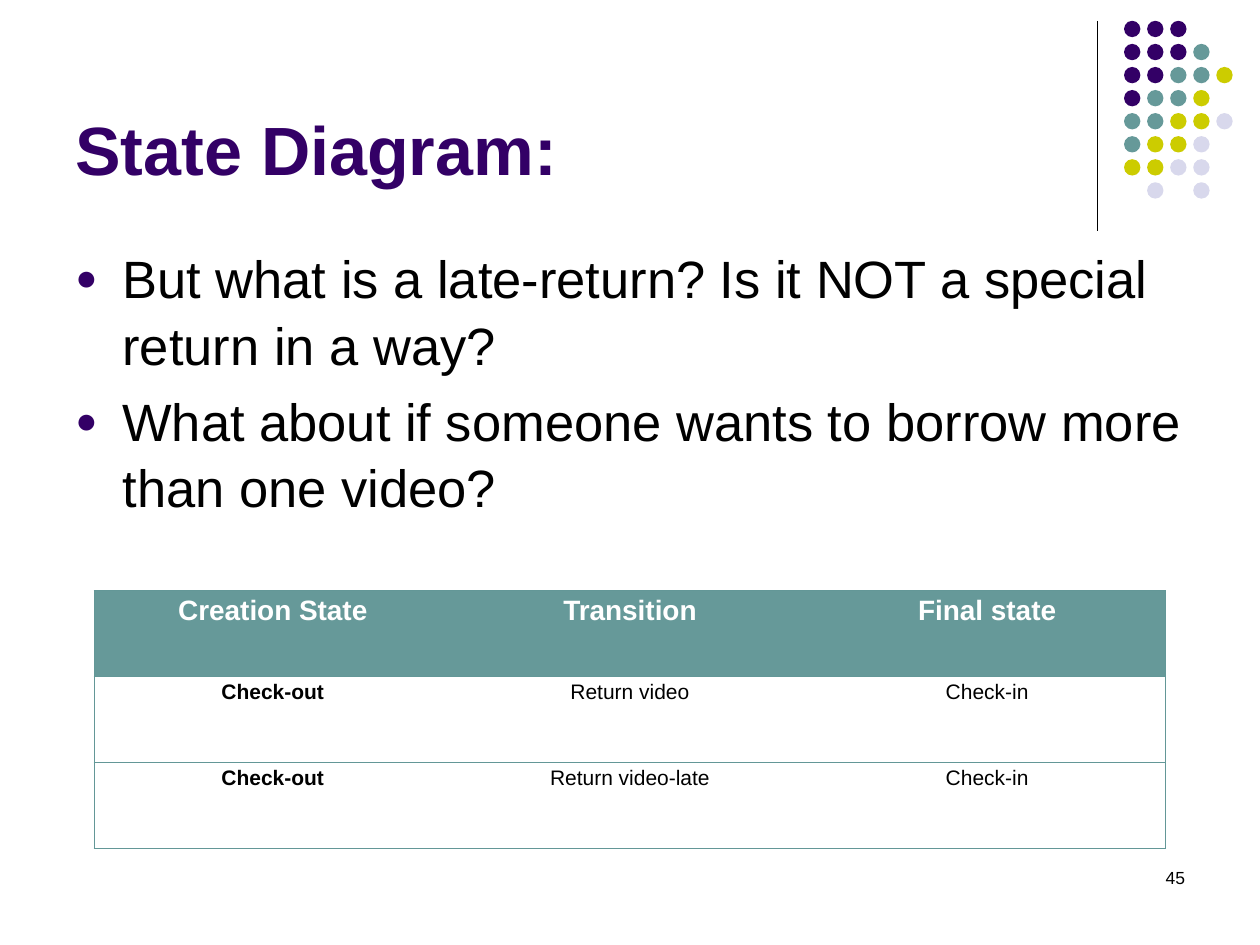
from lxml.etree import SubElement
from pptx import Presentation
from pptx.dml.color import RGBColor
from pptx.enum.shapes import MSO_CONNECTOR as CONN, MSO_SHAPE as SHAPE
from pptx.enum.text import MSO_ANCHOR as ANCHOR, PP_ALIGN as ALIGN
from pptx.oxml.ns import qn
from pptx.util import Cm, Pt

FONT = "Arial"
COLORS = {
    "purple": "330066", "teal": "669999", "lime": "CCCC00", "lilac": "D8D8EC",
    "border": "639797", "black": "000000", "white": "FFFFFF",
}
DOT_COLORS = {"P": "purple", "T": "teal", "L": "lime", "G": "lilac"}
DOT_ROWS = ["PPP", "PPPT", "PPTTL", "PTTL", "TTLLG", "TLLG", "LLGG", " G G"]
BULLETS = [
    "But what is a late-return? Is it NOT a special return in a way?",
    "What about if someone wants to borrow more than one video?",
]
TRANSITIONS = [
    ["Creation State", "Transition", "Final state"],
    ["Check-out", "Return video", "Check-in"],
    ["Check-out", "Return video-late", "Check-in"],
]


def rgb(name):
    return RGBColor.from_string(COLORS[name])


def format_text(p, size, color="black", bold=False):
    for r in p.runs:
        r.font.name = FONT
        r.font.size = Pt(size)
        r.font.bold = bold
        r.font.color.rgb = rgb(color)


def add_text(slide, box, text, size, color="black", bold=False,
             align=ALIGN.LEFT, anchor=ANCHOR.TOP):
    tf = slide.shapes.add_textbox(*map(Cm, box)).text_frame
    tf.word_wrap = True
    tf.vertical_anchor = anchor
    tf.text = text
    for p in tf.paragraphs:
        p.alignment = align
        format_text(p, size, color, bold)
    return tf


def add_bullets(slide, box, items):
    tf = add_text(slide, box, "\n".join(items), 30)
    for p in tf.paragraphs:
        p.space_before = Pt(6)
        p.line_spacing = 1.05
        pPr = p._p.get_or_add_pPr()
        pPr.set("marL", str(Cm(0.95)))
        pPr.set("indent", str(-Cm(0.95)))
        color = SubElement(pPr, qn("a:buClr"))
        SubElement(color, qn("a:srgbClr"), val=COLORS["purple"])
        SubElement(pPr, qn("a:buSzPct"), val="70000")
        SubElement(pPr, qn("a:buFont"), typeface=FONT)
        SubElement(pPr, qn("a:buChar"), char="●")


def add_dot_ornament(slide, box):
    """Vertical rule with a grid of coloured dots to its right."""
    left, top, _, height = box
    rule = slide.shapes.add_connector(
        CONN.STRAIGHT, Cm(left), Cm(top), Cm(left), Cm(top + height))
    rule.line.color.rgb = rgb("black")
    rule.line.width = Pt(0.75)
    SubElement(rule._element.spPr, qn("a:effectLst"))

    pitch, size, gap = 0.465, 0.33, 0.54
    dots = slide.shapes.add_group_shape()
    for row, keys in enumerate(DOT_ROWS):
        for col, key in enumerate(keys):
            if key == " ":
                continue
            dot = dots.shapes.add_shape(
                SHAPE.OVAL, Cm(left + gap + col * pitch),
                Cm(top + row * pitch), Cm(size), Cm(size))
            dot.shadow.inherit = False
            dot.fill.solid()
            dot.fill.fore_color.rgb = rgb(DOT_COLORS[key])
            dot.line.fill.background()


def set_borders(cell, visible):
    """Draw the sides named in visible (from L, R, T, B) and hide the others."""
    tcPr = cell._tc.get_or_add_tcPr()
    for side in "LRTB":
        ln = SubElement(tcPr, qn(f"a:ln{side}"), w=str(Pt(0.75)))
        if side in visible:
            fill = SubElement(ln, qn("a:solidFill"))
            SubElement(fill, qn("a:srgbClr"), val=COLORS["border"])
        else:
            SubElement(ln, qn("a:noFill"))


def add_transition_table(slide, box, rows):
    last_col = len(rows[0]) - 1
    table = slide.shapes.add_table(len(rows), last_col + 1, *map(Cm, box)).table
    table.horz_banding = False
    for i, texts in enumerate(rows):
        header = i == 0
        for j, text in enumerate(texts):
            cell = table.cell(i, j)
            sides = "TB" + ("L" if j == 0 else "") + ("R" if j == last_col else "")
            set_borders(cell, sides)
            cell.fill.solid()
            cell.fill.fore_color.rgb = rgb("teal" if header else "white")
            cell.margin_left = cell.margin_right = Cm(0.18)
            cell.margin_top = cell.margin_bottom = 0
            p = cell.text_frame.paragraphs[0]
            p.text = text
            p.alignment = ALIGN.CENTER
            p.line_spacing = 1.15
            format_text(p, 16 if header else 12,
                        "white" if header else "black", header or j == 0)


def main():
    prs = Presentation()
    prs.slide_width, prs.slide_height = Cm(25.4), Cm(19.05)
    slide = prs.slides.add_slide(prs.slide_layouts[6])
    add_dot_ornament(slide, (22.12, 0.42, 2.75, 4.23))
    add_text(slide, (1.27, 0.33, 20.96, 3.61), "State Diagram:", 39, "purple",
             bold=True, anchor=ANCHOR.BOTTOM)
    add_bullets(slide, (1.27, 4.78, 22.86, 12.24), BULLETS)
    add_text(slide, (20.96, 17.35, 3.18, 1.27), "45", 10, align=ALIGN.RIGHT)
    add_transition_table(slide, (1.9, 11.91, 21.6, 5.2), TRANSITIONS)
    prs.save("out.pptx")


if __name__ == "__main__":
    main()
